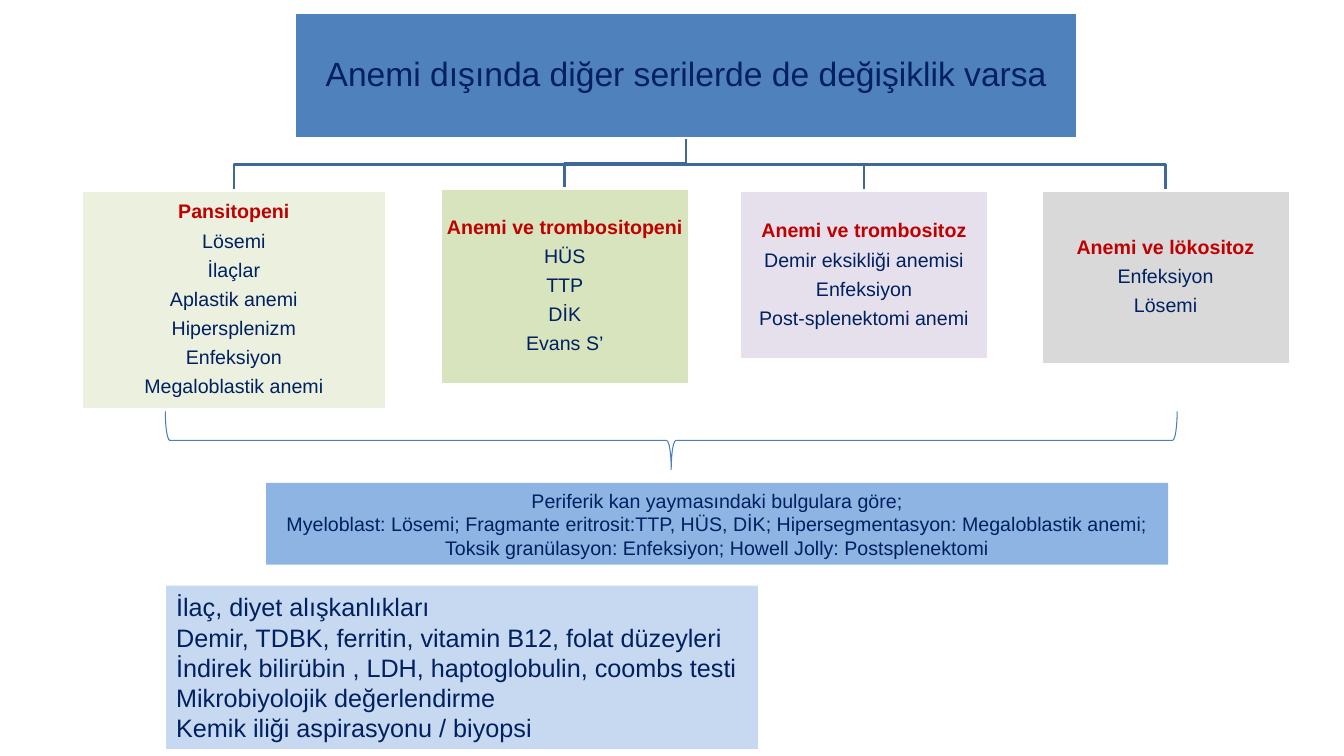
import pptx
import pptx.util
import pptx.dml.color
import pptx.enum.shapes
import pptx.enum.text

Cm = pptx.util.Cm
Pt = pptx.util.Pt
FORMS = pptx.enum.shapes.MSO_SHAPE
ALIGN = pptx.enum.text.PP_ALIGN
ANCHOR = pptx.enum.text.MSO_ANCHOR

HUES = {
    "title": "4F81BD", "green": "EBF1DE", "lime": "D7E4BD",
    "lilac": "E6E0EC", "grey": "D9D9D9", "note": "8EB4E3",
    "tests": "C6D9F1", "branch": "3F6797", "brace": "4B7EBC",
    "white": "FFFFFF", "navy": "002060", "red": "C00000",
}
TIGHT = dict.fromkeys(
    ("margin_left", "margin_right", "margin_top", "margin_bottom"), Cm(0.03))
SPACED = {"alignment": ALIGN.CENTER, "line_spacing": 0.9}
TITLE = (7.42, 0.33, 19.74, 3.15)
GROUPS = [
    ((2.06, 4.8, 7.67, 5.51), "green",
     ["Pansitopeni", "Lösemi", "İlaçlar", "Aplastik anemi", "Hipersplenizm",
      "Enfeksiyon", "Megaloblastik anemi"]),
    ((11.1, 4.75, 6.27, 4.93), "lime",
     ["Anemi ve trombositopeni", "HÜS", "TTP", "DİK", "Evans S’"]),
    ((18.64, 4.8, 6.27, 4.27), "lilac",
     ["Anemi ve trombositoz", "Demir eksikliği anemisi", "Enfeksiyon",
      "Post-splenektomi anemi"]),
    ((26.24, 4.8, 6.27, 4.39), "grey",
     ["Anemi ve lökositoz", "Enfeksiyon", "Lösemi"]),
]
NOTE = [
    "Periferik kan yaymasındaki bulgulara göre;",
    "Myeloblast: Lösemi; Fragmante eritrosit:TTP, HÜS, DİK; "
    "Hipersegmentasyon: Megaloblastik anemi; "
    "Toksik granülasyon: Enfeksiyon; Howell Jolly: Postsplenektomi",
]
TESTS = [
    "İlaç, diyet alışkanlıkları",
    "Demir, TDBK, ferritin, vitamin B12, folat düzeyleri",
    "İndirek bilirübin , LDH, haptoglobulin, coombs testi",
    "Mikrobiyolojik değerlendirme",
    "Kemik iliği aspirasyonu / biyopsi",
]


def apply(item, form):
    for name, value in form.items():
        setattr(item, name, value)


class Chart:
    def __init__(self, slide, font):
        self.slide = slide
        self.font = font

    def hue(self, name):
        return pptx.dml.color.RGBColor.from_string(HUES[name])

    def edge(self, shape, hue, width):
        shape.shadow.inherit = False
        shape.line.color.rgb = self.hue(hue)
        shape.line.width = Pt(width)

    def box(self, place, fill, lines, size, para, frame=None, head="navy", rim=False):
        shape = self.slide.shapes.add_shape(FORMS.RECTANGLE, *map(Cm, place))
        shape.fill.solid()
        shape.fill.fore_color.rgb = self.hue(fill)
        if rim:
            self.edge(shape, "white", 2)
        else:
            shape.shadow.inherit = False
            shape.line.fill.background()
        text = shape.text_frame
        apply(text, {"word_wrap": True, "vertical_anchor": ANCHOR.MIDDLE, **(frame or {})})
        for row, line in enumerate(lines):
            part = text.add_paragraph() if row else text.paragraphs[0]
            apply(part, para)
            run = part.add_run()
            run.text = line
            lead = row == 0 and head != "navy"
            apply(run.font, {"name": self.font, "size": Pt(size), "bold": lead})
            run.font.color.rgb = self.hue(head if lead else "navy")

    def branch(self, start, end):
        (left, top), (right, low) = start, end
        mid = (top + low) / 2
        pen = self.slide.shapes.build_freeform(Cm(left), Cm(top))
        turns = [(left, mid), (right, mid), (right, low)]
        pen.add_line_segments([(Cm(x), Cm(y)) for x, y in turns], close=False)
        shape = pen.convert_to_shape()
        shape.fill.background()
        self.edge(shape, "branch", 2)

    def brace(self, place, bends):
        shape = self.slide.shapes.add_shape(FORMS.RIGHT_BRACE, *map(Cm, place))
        shape.rotation = 90
        for spot, bend in enumerate(bends):
            shape.adjustments[spot] = bend
        shape.fill.background()
        self.edge(shape, "brace", 0.75)


def main():
    deck = pptx.Presentation()
    apply(deck, {"slide_width": Cm(33.87), "slide_height": Cm(19.05)})
    chart = Chart(deck.slides.add_slide(deck.slide_layouts[6]), "Arial")

    left, top, width, height = TITLE
    root = (left + width / 2, top + height)
    for (x, y, wide, _), _, _ in reversed(GROUPS):
        chart.branch(root, (x + wide / 2, y))

    chart.box(TITLE, "title", ["Anemi dışında diğer serilerde de değişiklik varsa"],
              24, SPACED, TIGHT, rim=True)
    for place, fill, lines in GROUPS:
        chart.box(place, fill, lines, 14, {**SPACED, "space_after": Pt(5.6)},
                  TIGHT, "red", True)

    chart.brace((16.18, -1.65, 1.47, 25.5), (0.08, 0.5))
    chart.box((6.71, 12.17, 22.73, 2.06), "note", NOTE, 14, {"alignment": ALIGN.CENTER})
    chart.box((4.19, 14.76, 14.91, 4.11), "tests", TESTS, 18, {"alignment": ALIGN.LEFT})
    deck.save("out.pptx")


if __name__ == "__main__":
    main()
